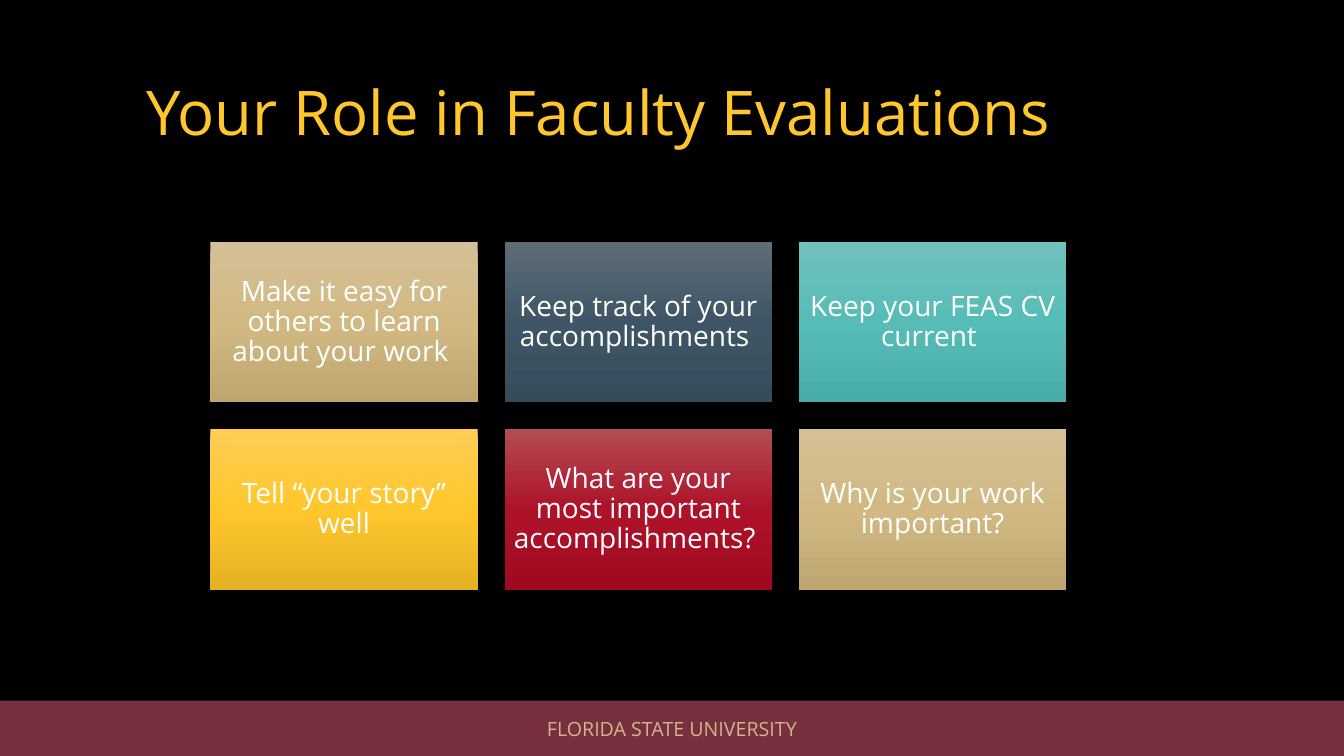
from copy import deepcopy

from pptx import Presentation
from pptx.dml.color import RGBColor
from pptx.enum import shapes, text
from pptx.oxml.ns import qn
from pptx.util import Pt

FONT = "Open Sans"
BLACK = RGBColor(0x00, 0x00, 0x00)
WHITE = RGBColor(0xFF, 0xFF, 0xFF)
GARNET = RGBColor(0x78, 0x2F, 0x40)
GOLD = RGBColor(0xCE, 0xB8, 0x88)
YELLOW = RGBColor(0xFF, 0xC7, 0x2C)

# Top, middle and bottom colour of each card
SAND = (RGBColor(0xD4, 0xC0, 0x96), RGBColor(0xD2, 0xB9, 0x84), RGBColor(0xBE, 0xA6, 0x71))
SLATE = (RGBColor(0x5E, 0x6C, 0x77), RGBColor(0x3F, 0x55, 0x65), RGBColor(0x37, 0x4C, 0x5B))
TEAL = (RGBColor(0x71, 0xC0, 0xBB), RGBColor(0x56, 0xBD, 0xB6), RGBColor(0x48, 0xAD, 0xA6))
AMBER = (RGBColor(0xFF, 0xCC, 0x56), YELLOW, RGBColor(0xE5, 0xB2, 0x25))
RED = (RGBColor(0xB2, 0x4D, 0x54), RGBColor(0xAD, 0x12, 0x29), RGBColor(0xA0, 0x0A, 0x20))

CARDS = [
    ("Make it easy for others to learn about your work ", SAND),
    ("Keep track of your accomplishments ", SLATE),
    ("Keep your FEAS CV current ", TEAL),
    ("Tell “your story” well", AMBER),
    ("What are your most important accomplishments? ", RED),
    ("Why is your work important?", SAND),
]
COLS = 3
LEFT, TOP = 150.3, 172.8
WIDTH, HEIGHT = 191, 114.6
GAP = 19.2


def write(shape, words, size, color, align, inset=(7.2, 3.6), space=1.0):
    """Fill a shape with one paragraph, centred in height."""
    frame = shape.text_frame
    frame.text = words
    frame.word_wrap = True
    frame.auto_size = text.MSO_AUTO_SIZE.NONE
    frame.vertical_anchor = text.MSO_ANCHOR.MIDDLE
    frame.margin_left = frame.margin_right = Pt(inset[0])
    frame.margin_top = frame.margin_bottom = Pt(inset[1])
    para = frame.paragraphs[0]
    para.alignment = align
    para.line_spacing = space
    para.font.name = FONT
    para.font.size = Pt(size)
    para.font.color.rgb = color


def add_box(slide, x, y, w, h):
    box = slide.shapes.add_shape(
        shapes.MSO_SHAPE.RECTANGLE, Pt(x), Pt(y), Pt(w), Pt(h))
    box.shadow.inherit = False
    box.line.fill.background()
    return box


def shade(box, colors):
    """Apply a three-stop gradient from top to bottom."""
    fill = box.fill
    fill.gradient()
    fill.gradient_angle = 270
    first = box._element.spPr.find(".//" + qn("a:gs"))
    first.addnext(deepcopy(first))
    for stop, color, place in zip(fill.gradient_stops, colors, (0, 0.5, 1)):
        stop.color.rgb = color
        stop.position = place


def add_title(slide, words):
    title = slide.shapes.title
    title.left, title.top = Pt(97.2), Pt(29.5)
    title.width, title.height = Pt(736.6), Pt(106.6)
    write(title, words, 44, YELLOW, text.PP_ALIGN.LEFT, space=0.9)


def add_footer(slide, words):
    bar = add_box(slide, 0, 500.4, 960, 39.6)
    bar.fill.solid()
    bar.fill.fore_color.rgb = GARNET
    write(bar, words, 14, GOLD, text.PP_ALIGN.CENTER)


def add_cards(slide):
    for i, (words, colors) in enumerate(CARDS):
        row, col = divmod(i, COLS)
        card = add_box(slide, LEFT + col * (WIDTH + GAP),
                       TOP + row * (HEIGHT + GAP), WIDTH, HEIGHT)
        shade(card, colors)
        write(card, words, 20, WHITE, text.PP_ALIGN.CENTER, (6, 6), 0.9)


def main():
    deck = Presentation()
    deck.slide_width, deck.slide_height = Pt(960), Pt(540)
    slide = deck.slides.add_slide(deck.slide_layouts[5])
    slide.background.fill.solid()
    slide.background.fill.fore_color.rgb = BLACK
    add_footer(slide, "FLORIDA STATE UNIVERSITY")
    add_title(slide, "Your Role in Faculty Evaluations")
    add_cards(slide)
    deck.save("out.pptx")


if __name__ == "__main__":
    main()
